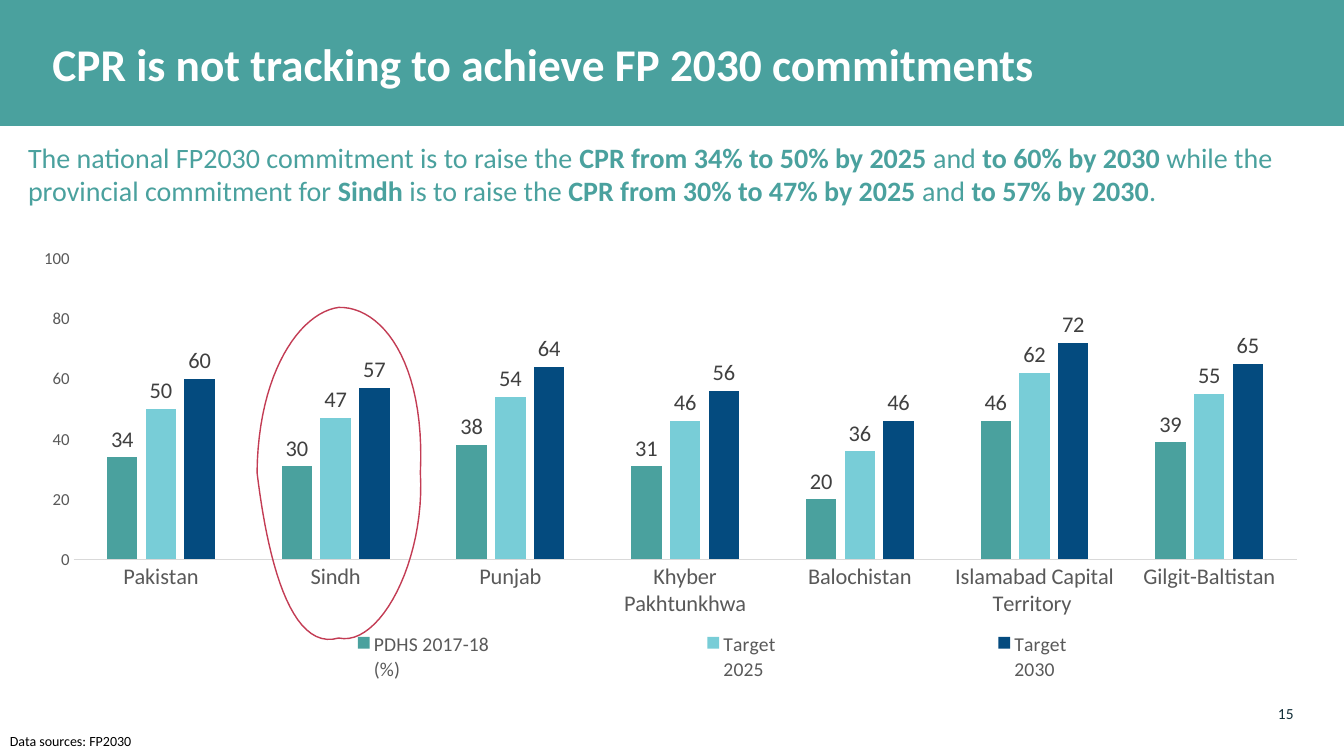
"""Build the slide comparing contraceptive prevalence with FP 2030 commitments."""
from lxml import etree
from pptx import Presentation
from pptx.chart.data import CategoryChartData
from pptx.dml.color import RGBColor
from pptx.enum.chart import XL_CHART_TYPE as ChartType, XL_LABEL_POSITION as LabelPosition
from pptx.enum.chart import XL_LEGEND_POSITION as LegendPosition, XL_TICK_MARK as TickMark
from pptx.enum.shapes import MSO_SHAPE as Shape
from pptx.enum.text import MSO_ANCHOR as Anchor, PP_ALIGN as Align
from pptx.oxml.ns import qn
from pptx.util import Inches, Pt

TEAL = RGBColor(0x4A, 0xA1, 0x9E)
AQUA = RGBColor(0x78, 0xCD, 0xD7)
NAVY = RGBColor(0x04, 0x4B, 0x7F)
CRIMSON = RGBColor(0xC3, 0x3C, 0x54)
DARK = RGBColor(0x11, 0x2E, 0x38)
LABEL_GREY = RGBColor(0x40, 0x40, 0x40)
AXIS_GREY = RGBColor(0x59, 0x59, 0x59)
LINE_GREY = RGBColor(0xD9, 0xD9, 0xD9)
BLACK = RGBColor(0, 0, 0)
WHITE = RGBColor(0xFF, 0xFF, 0xFF)
CHART_WIDTH, CHART_HEIGHT = 12.94, 4.47


def set_font(font, size, color, bold=False):
    font.name, font.size, font.bold = "Calibri", Pt(size), bold
    font.color.rgb = color


def set_layout(element, left, top, width, height, **settings):
    for old in element.findall(qn("c:layout")):
        element.remove(old)
    layout = etree.Element(qn("c:layout"))
    manual = etree.SubElement(layout, qn("c:manualLayout"))
    settings.update(xMode="edge", yMode="edge", x=left / CHART_WIDTH, y=top / CHART_HEIGHT,
                    w=width / CHART_WIDTH, h=height / CHART_HEIGHT)
    for key, value in settings.items():
        etree.SubElement(manual, qn("c:" + key), val=str(value))
    if element.tag == qn("c:legend"):
        element.find(qn("c:legendPos")).addnext(layout)
    else:
        element.insert(0, layout)


presentation = Presentation()
presentation.slide_width, presentation.slide_height = Inches(13.33), Inches(7.5)
slide = presentation.slides.add_slide(presentation.slide_layouts[5])

title = slide.shapes.title
title.left, title.top, title.width, title.height = map(Inches, (0.42, 0.08, 12.33, 1.17))
title.text_frame.text = "CPR is not tracking to achieve FP 2030 commitments"
title.text_frame.vertical_anchor = Anchor.MIDDLE
paragraph = title.text_frame.paragraphs[0]
paragraph.alignment = Align.LEFT
paragraph.line_spacing = 0.9
set_font(paragraph.runs[0].font, 32.4, WHITE, True)

band = slide.shapes.add_shape(Shape.RECTANGLE, 0, 0, Inches(13.33), Inches(1.25))
band.shadow.inherit = False
band.fill.solid()
band.fill.fore_color.rgb = TEAL
band.line.fill.background()
title.element.addprevious(band.element)

chart_data = CategoryChartData(number_format="0")
chart_data.categories = ["Pakistan", "Sindh", "Punjab", "Khyber Pakhtunkhwa", "Balochistan",
                         "Islamabad Capital Territory ", "Gilgit-Baltistan"]
chart_data.add_series("PDHS 2017-18\n(%)", (34, 31, 38, 31, 20, 46, 39))
chart_data.add_series("Target \n2025", (50, 47, 54, 46, 36, 62, 55))
chart_data.add_series("Target\n2030", (60, 57, 64, 56, 46, 72, 65))
chart = slide.shapes.add_chart(ChartType.COLUMN_CLUSTERED, Inches(0.18), Inches(2.38),
                               Inches(CHART_WIDTH), Inches(CHART_HEIGHT), chart_data).chart
set_font(chart.font, 12, BLACK)
chart.has_title = False
chart.has_legend = True
chart.legend.position = LegendPosition.BOTTOM
chart.legend.include_in_layout = False
set_font(chart.legend.font, 14, AXIS_GREY)

plot = chart.plots[0]
plot.gap_width, plot.overlap, plot.vary_by_categories = 219, -27, False
for series, color in zip(plot.series, (TEAL, AQUA, NAVY)):
    series.format.fill.solid()
    series.format.fill.fore_color.rgb = color
    labels = series.data_labels
    labels.show_value = True
    labels.position = LabelPosition.OUTSIDE_END
    labels.number_format, labels.number_format_is_linked = "0", False
    set_font(labels.font, 16, LABEL_GREY)

sindh_label = plot.series[0].points[1].data_label
sindh_label.text_frame.text = "30"
set_font(sindh_label.text_frame.paragraphs[0].runs[0].font, 16, LABEL_GREY)
sindh_label.position = LabelPosition.OUTSIDE_END

for axis, size in ((chart.category_axis, 16), (chart.value_axis, 12)):
    axis.major_tick_mark = axis.minor_tick_mark = TickMark.NONE
    axis.has_major_gridlines = False
    set_font(axis.tick_labels.font, size, AXIS_GREY)
chart.category_axis.format.line.color.rgb = LINE_GREY
chart.category_axis.format.line.width = Pt(0.75)
chart.value_axis.format.line.fill.background()
chart.value_axis.minimum_scale, chart.value_axis.maximum_scale = 0, 100
chart.value_axis.major_unit = 20

plot_area = chart.element.find(".//" + qn("c:plotArea"))
set_layout(plot_area, 0.55, 0.19, 12.13, 2.98, layoutTarget="inner")
set_layout(chart.element.find(".//" + qn("c:legend")), 1.27, 3.85, 11.23, 0.58)

start = (2.55, 4.69)
curves = [((2.56, 3.69), (2.98, 3.1), (3.36, 3.05)),
          ((3.78, 3.04), (4.22, 3.58), (4.17, 4.69)),
          ((4.22, 5.56), (3.77, 6.42), (3.36, 6.33)),
          ((2.87, 6.47), (2.65, 5.51), start)]
outline, corner, steps = [], start, 24
for curve in curves:
    for step in range(1, steps + 1):
        t = step / steps
        weights = ((1 - t) ** 3, 3 * t * (1 - t) ** 2, 3 * t ** 2 * (1 - t), t ** 3)
        outline.append(tuple(Inches(sum(weight * point[axis] for weight, point in
                                        zip(weights, (corner, *curve)))) for axis in (0, 1)))
    corner = curve[-1]
builder = slide.shapes.build_freeform(Inches(start[0]), Inches(start[1]))
builder.add_line_segments(outline, close=True)
sindh_ring = builder.convert_to_shape()
sindh_ring.shadow.inherit = False
sindh_ring.fill.background()
sindh_ring.line.color.rgb = CRIMSON
sindh_ring.line.width = Pt(1)

summary = slide.shapes.add_textbox(Inches(0.18), Inches(1.34), Inches(12.87), Inches(0.77))
summary.text_frame.word_wrap = True
phrases = ["The national FP2030 commitment is to raise the ", "CPR from 34% to 50% by 2025", " and ",
           "to 60% by 2030", " while the provincial commitment for ", "Sindh", " is to raise the ",
           "CPR from 30% to 47% by 2025", " and ", "to 57% by 2030", "."]
for index, phrase in enumerate(phrases):
    run = summary.text_frame.paragraphs[0].add_run()
    run.text = phrase
    set_font(run.font, 20, TEAL, index % 2 == 1)

page_number = slide.shapes.add_textbox(Inches(12.34), Inches(6.99), Inches(0.49), Inches(0.2))
frame = page_number.text_frame
frame.margin_left = frame.margin_right = frame.margin_top = frame.margin_bottom = 0
frame.text = "15"
frame.paragraphs[0].alignment = Align.RIGHT
set_font(frame.paragraphs[0].runs[0].font, 11, DARK)

source_note = slide.shapes.add_textbox(0, Inches(7.22), Inches(1.44), Inches(0.27))
source_note.text_frame.word_wrap = False
source_note.text_frame.text = "Data sources: FP2030"
set_font(source_note.text_frame.paragraphs[0].runs[0].font, 10, BLACK)

presentation.save("out.pptx")
